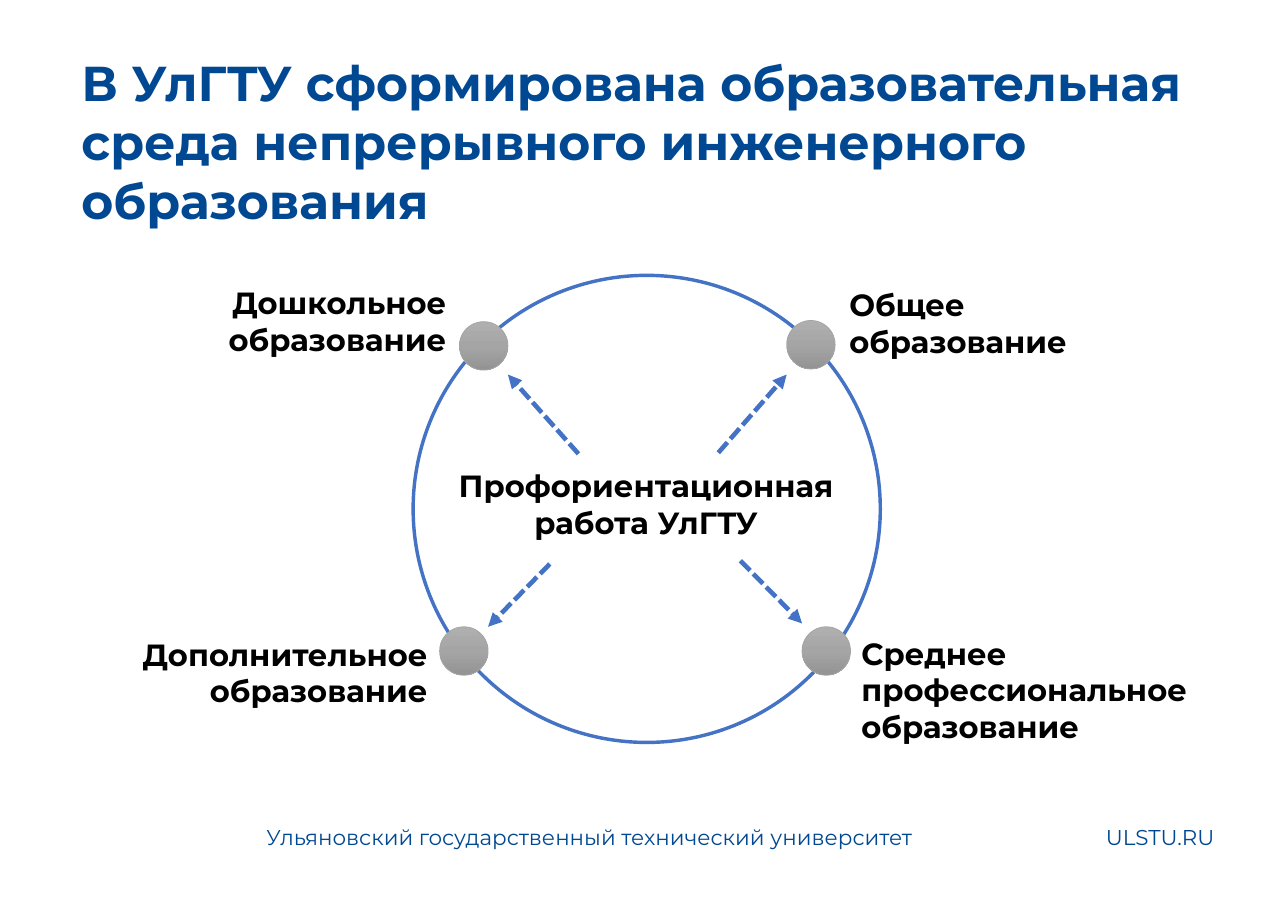
from copy import deepcopy

from pptx import Presentation
from pptx.dml.color import RGBColor
from pptx.enum.dml import MSO_LINE
from pptx.enum.shapes import MSO_CONNECTOR, MSO_SHAPE
from pptx.enum.text import MSO_AUTO_SIZE, PP_ALIGN
from pptx.oxml.ns import qn
from pptx.util import Inches, Pt

NAVY = RGBColor(0x00, 0x48, 0x92)
BLACK = RGBColor(0x00, 0x00, 0x00)
BLUE = RGBColor(0x44, 0x72, 0xC4)
GREY = RGBColor(0xA5, 0xA5, 0xA5)
LIGHT_GREY = RGBColor(0xAF, 0xAF, 0xAF)
DARK_GREY = RGBColor(0x93, 0x93, 0x93)

NODE_SIZE = 0.44


class Diagram:
    """Draws styled elements on the current slide."""

    font_name = "Montserrat"

    def __init__(self, slide):
        self.shapes = slide.shapes

    def text(self, words, left, top, width, height, size, color,
             bold=False, align=PP_ALIGN.LEFT, grow=False):
        box = self.shapes.add_textbox(
            Inches(left), Inches(top), Inches(width), Inches(height))
        frame = box.text_frame
        frame.word_wrap = True
        if grow:
            frame.auto_size = MSO_AUTO_SIZE.SHAPE_TO_FIT_TEXT
        frame.text = words
        for paragraph in frame.paragraphs:
            paragraph.alignment = align
            paragraph.font.name = self.font_name
            paragraph.font.size = Pt(size)
            paragraph.font.bold = bold
            paragraph.font.color.rgb = color

    def label(self, words, left, top, width, height, align):
        self.text(words, left, top, width, height, 20, BLACK, True, align, True)

    def circle(self, left, top, size, line_color, line_width):
        circle = self.shapes.add_shape(
            MSO_SHAPE.OVAL, Inches(left), Inches(top), Inches(size), Inches(size))
        circle.shadow.inherit = False
        circle.fill.background()
        circle.line.color.rgb = line_color
        circle.line.width = Pt(line_width)
        return circle

    def node(self, left, top):
        node = self.circle(left, top, NODE_SIZE, GREY, 0.5)
        node.fill.gradient()
        node.fill.gradient_angle = 270
        # The default gradient has two stops; add a middle one
        stop_list = node._element.spPr.find(qn("a:gradFill")).find(qn("a:gsLst"))
        stop_list.insert(1, deepcopy(stop_list[0]))
        stops = zip(node.fill.gradient_stops, (0, 0.5, 1),
                    (LIGHT_GREY, GREY, DARK_GREY))
        for stop, position, color in stops:
            stop.position = position
            stop.color.rgb = color

    def arrow(self, start, end):
        arrow = self.shapes.add_connector(
            MSO_CONNECTOR.STRAIGHT, *(Inches(value) for value in (*start, *end)))
        arrow.line.color.rgb = BLUE
        arrow.line.width = Pt(3)
        arrow.line.dash_style = MSO_LINE.SQUARE_DOT
        properties = arrow._element.spPr
        head = properties.makeelement(qn("a:tailEnd"), {"type": "triangle"})
        properties.find(qn("a:ln")).append(head)
        properties.append(properties.makeelement(qn("a:effectLst"), {}))


def main():
    presentation = Presentation()
    presentation.slide_width = Inches(11.69)
    presentation.slide_height = Inches(8.27)
    diagram = Diagram(presentation.slides.add_slide(presentation.slide_layouts[6]))

    # Title and footer
    diagram.text("В УлГТУ сформирована образовательная среда непрерывного "
                 "инженерного образования",
                 0.64, 0.43, 10.85, 2.51, 32, NAVY, bold=True)
    diagram.text("Ульяновский государственный технический университет",
                 2.32, 7.43, 6.2, 0.39, 14, NAVY)
    diagram.text("ULSTU.RU", 9.94, 7.43, 1.4, 0.39, 14, NAVY)

    # Centre and ring
    diagram.label("Профориентационная работа УлГТУ",
                  3.85, 4.19, 4.03, 0.77, PP_ALIGN.CENTER)
    diagram.circle(3.75, 2.5, 4.24, BLUE, 2.25)

    # Education levels: label, its box, alignment, node, arrow start and end
    levels = [
        ("Дошкольное образование", (1.76, 2.53, 2.39, 0.77), PP_ALIGN.RIGHT,
         (4.17, 2.92), (5.25, 4.12), (4.61, 3.4)),
        ("Общее образование", (7.61, 2.55, 2.39, 0.77), PP_ALIGN.LEFT,
         (7.14, 2.91), (6.52, 4.11), (7.14, 3.4)),
        ("Дополнительное образование", (1.05, 5.72, 2.93, 0.77), PP_ALIGN.RIGHT,
         (3.99, 5.69), (4.99, 5.12), (4.43, 5.69)),
        ("Среднее\nпрофессиональное образование", (7.72, 5.71, 3.2, 1.11),
         PP_ALIGN.LEFT, (7.28, 5.69), (6.72, 5.09), (7.28, 5.66)),
    ]
    for words, box, align, node, start, end in levels:
        diagram.label(words, *box, align)
        diagram.node(*node)
        diagram.arrow(start, end)

    presentation.save("out.pptx")


if __name__ == "__main__":
    main()
